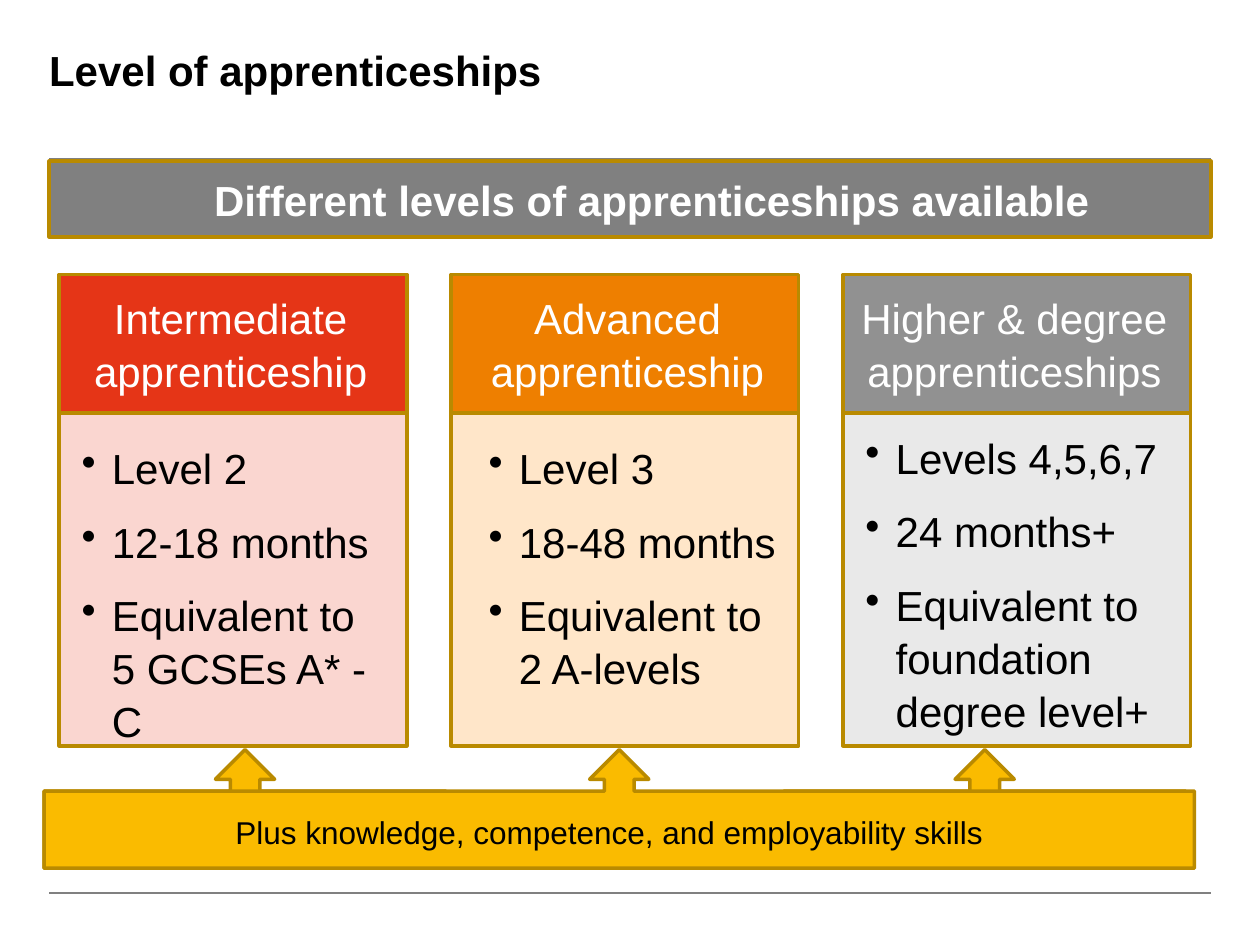
"""Build a slide that compares three levels of apprenticeship."""
import pptx
import pptx.util
import pptx.dml.color
import pptx.enum.shapes
import pptx.enum.text
import lxml.etree
import pptx.oxml.ns

Inches, Pt = pptx.util.Inches, pptx.util.Pt
KIND = pptx.enum.shapes.MSO_SHAPE
CENTER = pptx.enum.text.PP_ALIGN.CENTER

COLORS = {
    "black": "000000", "white": "FFFFFF", "gray": "808080",
    "gold": "FABB00", "edge": "B98A00",
    "red": "E53517", "pink": "FAD6D0",
    "orange": "EE7F00", "peach": "FFE6C9",
    "steel": "919191", "pale": "E9E9E9",
}
TITLE = "Level of apprenticeships"
BANNER = "Different levels of apprenticeships available"
BASE = "Plus knowledge, competence, and employability skills"
LEVELS = [
    {"head": ["Intermediate", "apprenticeship"], "dark": "red", "light": "pink",
     "items": ["Level 2", "12-18 months", "Equivalent to 5 GCSEs A* - C"],
     "shift": 0, "inset": 0.08, "top": 3.44, "width": 2.6},
    {"head": ["Advanced", "apprenticeship"], "dark": "orange", "light": "peach",
     "items": ["Level 3", "18-48 months", "Equivalent to 2 A-levels"],
     "shift": 0.04, "inset": 0.2, "top": 3.44, "width": 2.6},
    {"head": ["Higher & degree", "apprenticeships"], "dark": "steel", "light": "pale",
     "items": ["Levels 4,5,6,7", "24 months+", "Equivalent to foundation degree level+"],
     "shift": 0, "inset": 0.08, "top": 3.36, "width": 2.68},
]
WIDE, HIGH = 10, 7.5
EDGE = 0.39
LEFT, PITCH, COL = 0.47, 3.11, 2.76
HEAD, BODY, FOOT = 2.18, 3.28, 5.92
CALLS = [(6.22, 3.19), (0.35, 3.19), (0.35, 9.13)]

deck = pptx.Presentation()
deck.slide_width, deck.slide_height = Inches(WIDE), Inches(HIGH)
slide = deck.slides.add_slide(deck.slide_layouts[6])
shapes = slide.shapes


def color(name):
    return pptx.dml.color.RGBColor.from_string(COLORS[name])


def block(kind, x, y, w, h, fill):
    shape = shapes.add_shape(kind, *map(Inches, (x, y, w, h)))
    shape.shadow.inherit = False
    shape.fill.solid()
    shape.fill.fore_color.rgb = color(fill)
    shape.line.color.rgb = color("edge")
    shape.line.width = Pt(2)


def rule(y):
    line = shapes.add_connector(pptx.enum.shapes.MSO_CONNECTOR.STRAIGHT,
                                *map(Inches, (EDGE, y, WIDE - EDGE, y)))
    line.line.color.rgb = color("gray")
    line.line.width = Pt(1)
    lxml.etree.SubElement(line._element.spPr, pptx.oxml.ns.qn("a:effectLst"))


def bullet(para):
    props = para._p.get_or_add_pPr()
    props.set("marL", str(Inches(0.24)))
    props.set("indent", str(-Inches(0.24)))
    lxml.etree.SubElement(props, pptx.oxml.ns.qn("a:buChar")).set("char", "•")


def write(lines, x, y, w, h, tint="black", size=24, bold=False,
          align=None, space=1.05, dots=False):
    frame = shapes.add_textbox(*map(Inches, (x, y, w, h))).text_frame
    frame.word_wrap = True
    for n, line in enumerate(lines):
        para = frame.add_paragraph() if n else frame.paragraphs[0]
        para.text = line
        if dots:
            bullet(para)
            para.space_before = Pt(6 if n else 0)
            para.space_after = Pt(6)
        para.alignment = align
        para.line_spacing = space
        font = para.font
        font.name, font.size, font.bold = "Arial", Pt(size), bold
        font.color.rgb = color(tint)
    return frame


for y in (1.26, 7.09):
    rule(y)

title = write([TITLE], EDGE, EDGE, 6.87, 0.86, bold=True, space=Pt(26))
title.margin_left = title.margin_right = title.margin_top = title.margin_bottom = 0

for x, w in CALLS:
    block(KIND.UP_ARROW_CALLOUT, x, 5.95, w, 0.94, "gold")
write([BASE], 1.77, 6.39, 6.58, 0.4, size=18)

for n, level in enumerate(LEVELS):
    x = LEFT + n * PITCH
    block(KIND.RECTANGLE, x, BODY, COL, FOOT - BODY, level["light"])
    block(KIND.RECTANGLE, x, HEAD, COL, BODY - HEAD, level["dark"])
    write(level["head"], x + level["shift"], 2.25, 2.72, 0.91, "white", align=CENTER)
    write(level["items"], x + level["inset"], level["top"], level["width"], 2.05, dots=True)

block(KIND.RECTANGLE, EDGE, 1.28, WIDE - 2 * EDGE, 0.6, "gray")
write([BANNER], 1.6, 1.32, 7.18, 0.5, "white", bold=True)

deck.save("out.pptx")
